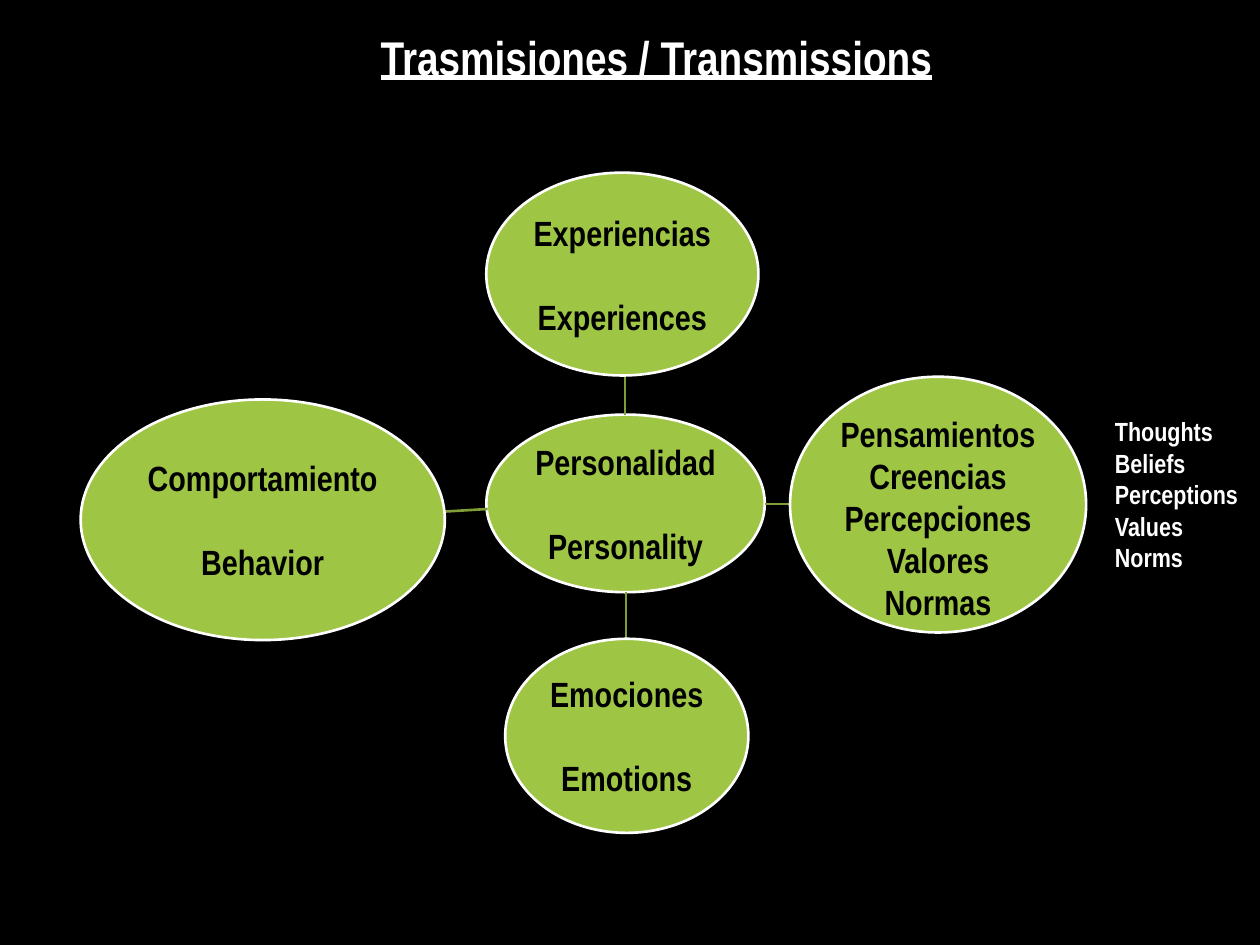
"""Build a slide of personality and the four things that shape it."""
from dataclasses import dataclass

import pptx
import pptx.dml.color
import pptx.enum.shapes
import pptx.enum.text
import pptx.oxml.ns
import pptx.util
from lxml import etree

Inches = pptx.util.Inches
Pt = pptx.util.Pt
RGB = pptx.dml.color.RGBColor
Align = pptx.enum.text.PP_ALIGN
Anchor = pptx.enum.text.MSO_ANCHOR
Fit = pptx.enum.text.MSO_AUTO_SIZE


@dataclass(frozen=True)
class Theme:
    """Colours, font, type sizes and line width."""
    back: RGB = RGB.from_string("000000")
    light: RGB = RGB.from_string("FFFFFF")
    dark: RGB = RGB.from_string("000000")
    green: RGB = RGB.from_string("9EC544")
    olive: RGB = RGB.from_string("7F9E36")
    font: str = "Arial Narrow"
    title: float = 27
    node: float = 20
    side: float = 15
    line: float = 1.5


@dataclass(frozen=True)
class Node:
    """An oval with its words, the gap between them and its top inset."""
    box: tuple[float, float, float, float]
    words: tuple[str, ...]
    gap: float = 24
    top: float = 0.01


@dataclass(frozen=True)
class Link:
    """A straight line between two points."""
    start: tuple[float, float]
    end: tuple[float, float]


THEME = Theme()
HUB = Node((3.86, 3.29, 2.21, 1.41), ("Personalidad", "Personality"))
SPOKES = (
    (Link((4.96, 3.29), (4.96, 2.98)),
     Node((3.86, 1.37, 2.16, 1.61), ("Experiencias", "Experiences"))),
    (Link((6.07, 4), (6.27, 4)),
     Node((6.27, 2.99, 2.35, 2.03),
          ("Pensamientos", "Creencias", "Percepciones", "Valores", "Normas"),
          gap=0, top=0.21)),
    (Link((4.97, 4.7), (4.97, 5.07)),
     Node((4.01, 5.07, 1.93, 1.54), ("Emociones", "Emotions"))),
    (Link((3.87, 4.04), (3.53, 4.06)),
     Node((0.64, 3.17, 2.89, 1.91), ("Comportamiento", "Behavior"))),
)
SIDE = ("Thoughts", "Beliefs Perceptions", "Values", "Norms")


def write(frame, words: tuple[str, ...], size: float, ink: RGB,
          align=Align.LEFT, gap: float = 0) -> None:
    """Fill a text frame with one bold paragraph per entry."""
    frame.text = "\n".join(words)
    for i, para in enumerate(frame.paragraphs):
        para.alignment = align
        para.space_before = Pt(gap if i else 0)
        font = para.font
        font.name, font.size, font.bold = THEME.font, Pt(size), True
        font.color.rgb = ink


def add_node(slide, node: Node) -> None:
    """Draw one labelled oval."""
    oval = slide.shapes.add_shape(
        pptx.enum.shapes.MSO_SHAPE.OVAL, *map(Inches, node.box))
    oval.shadow.inherit = False
    oval.fill.solid()
    oval.fill.fore_color.rgb = THEME.green
    oval.line.color.rgb = THEME.light
    oval.line.width = Pt(THEME.line)
    frame = oval.text_frame
    frame.word_wrap = True
    frame.vertical_anchor = Anchor.MIDDLE
    frame.margin_left = frame.margin_right = frame.margin_bottom = Inches(0.01)
    frame.margin_top = Inches(node.top)
    write(frame, node.words, THEME.node, THEME.dark, Align.CENTER, node.gap)


def add_link(slide, link: Link) -> None:
    """Draw one plain line."""
    line = slide.shapes.add_connector(
        pptx.enum.shapes.MSO_CONNECTOR.STRAIGHT,
        *map(Inches, link.start + link.end))
    line.line.color.rgb = THEME.olive
    line.line.width = Pt(THEME.line)
    etree.SubElement(line._element.spPr, pptx.oxml.ns.qn("a:effectLst"))


def add_title(slide) -> None:
    """Place and format the title."""
    title = slide.shapes.title
    title.left, title.top, title.width, title.height = map(
        Inches, (2.92, 0.17, 4.62, 0.56))
    frame = title.text_frame
    frame.word_wrap = False
    frame.auto_size = Fit.SHAPE_TO_FIT_TEXT
    frame.vertical_anchor = Anchor.TOP
    write(frame, ("Trasmisiones / Transmissions",), THEME.title, THEME.light)
    frame.paragraphs[0].font.underline = True


def add_side(slide) -> None:
    """Place the English list beside the right oval."""
    box = slide.shapes.add_textbox(*map(Inches, (8.75, 3.25, 1.25, 1.36)))
    box.text_frame.word_wrap = True
    box.text_frame.auto_size = Fit.SHAPE_TO_FIT_TEXT
    write(box.text_frame, SIDE, THEME.side, THEME.light)


def main() -> None:
    """Build and save the deck."""
    deck = pptx.Presentation()
    deck.slide_width, deck.slide_height = Inches(10), Inches(7.5)
    slide = deck.slides.add_slide(deck.slide_layouts[5])
    slide.background.fill.solid()
    slide.background.fill.fore_color.rgb = THEME.back
    add_title(slide)
    add_node(slide, HUB)
    for link, node in SPOKES:
        add_link(slide, link)
        add_node(slide, node)
    add_side(slide)
    deck.save("out.pptx")


if __name__ == "__main__":
    main()
